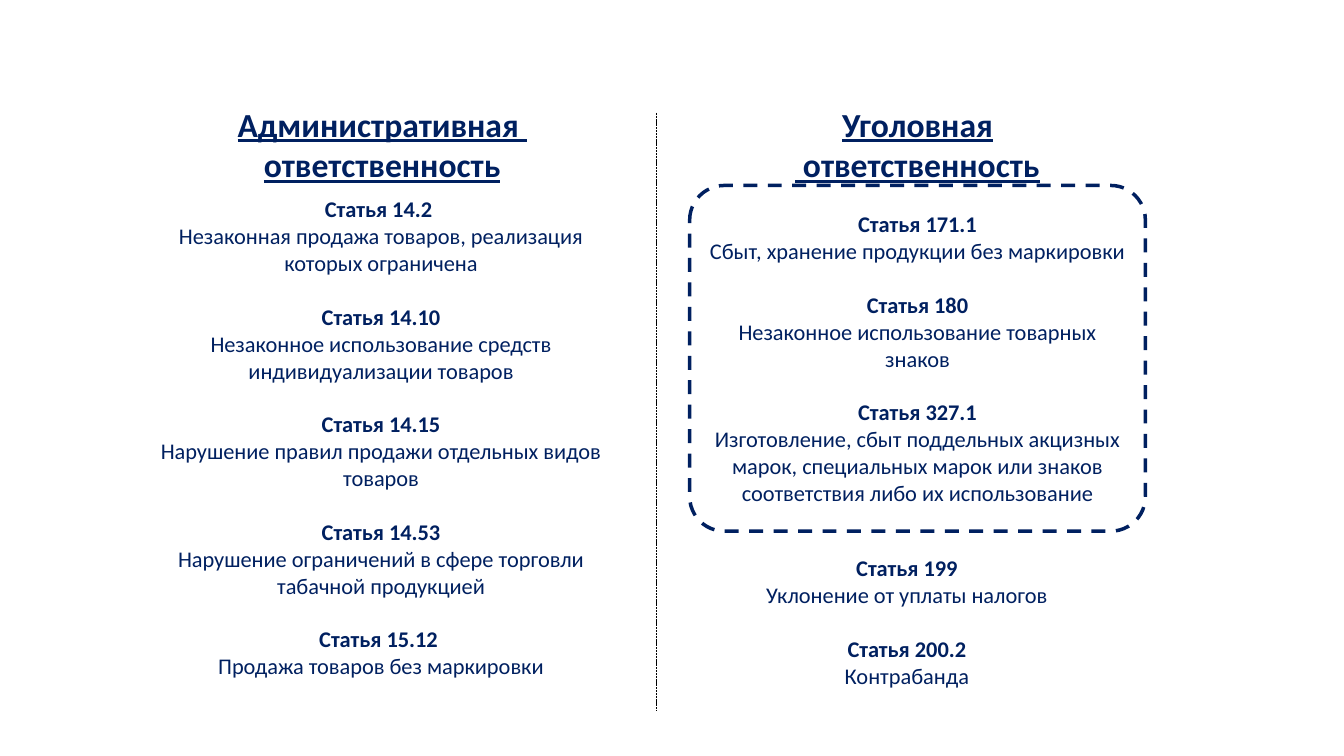
"""Build a slide comparing administrative and criminal liability articles."""
from dataclasses import dataclass

from lxml import etree
from pptx import Presentation
from pptx.dml.color import RGBColor
from pptx.enum.dml import MSO_LINE
from pptx.enum.shapes import MSO_CONNECTOR, MSO_SHAPE
from pptx.enum.text import MSO_ANCHOR, MSO_AUTO_SIZE, PP_ALIGN
from pptx.oxml.ns import qn
from pptx.shapes.base import BaseShape
from pptx.text.text import TextFrame
from pptx.util import Pt

EMU_PER_PX = 9144
COMPARISON_LAYOUT = 3 + 1
DASH, FINE_DASH = MSO_LINE.DASH, MSO_LINE.SQUARE_DOT
TOP, MIDDLE = MSO_ANCHOR.TOP, MSO_ANCHOR.MIDDLE
CENTER = PP_ALIGN.CENTER
NO_AUTOFIT = MSO_AUTO_SIZE.NONE
ROUNDED, STRAIGHT = MSO_SHAPE.ROUNDED_RECTANGLE, MSO_CONNECTOR.STRAIGHT


@dataclass(frozen=True)
class Theme:
    navy: RGBColor = RGBColor(0x00, 0x20, 0x60)
    black: RGBColor = RGBColor(0, 0, 0)
    font: str = "Calibri"
    heading_size: int = 24
    body_size: int = 16
    article_gap: float = 19.2
    frame_width: float = 2.5
    divider_width: float = 0.5


@dataclass(frozen=True)
class Box:
    left: int
    top: int
    width: int
    height: int


@dataclass(frozen=True)
class Article:
    number: str
    offence: str


@dataclass(frozen=True)
class Heading:
    placeholder: int
    box: Box
    lines: tuple[str, ...]


@dataclass(frozen=True)
class ArticleList:
    placeholder: int
    box: Box
    articles: tuple[Article, ...]


THEME = Theme()
HEADINGS = (
    Heading(1, Box(197, 98, 364, 91), ("Административная ", "ответственность")),
    Heading(3, Box(754, 98, 312, 91), ("Уголовная", " ответственность")),
)
LISTS = (
    ArticleList(2, Box(141, 189, 474, 522), (
        Article("Статья 14.2 ", "Незаконная продажа товаров, реализация которых ограничена"),
        Article("Статья 14.10", "Незаконное использование средств индивидуализации товаров"),
        Article("Статья 14.15", "Нарушение правил продажи отдельных видов товаров"),
        Article("Статья 14.53", "Нарушение ограничений в сфере торговли табачной продукцией"),
        Article("Статья 15.12 ", "Продажа товаров без маркировки"),
    )),
    ArticleList(4, Box(663, 545, 473, 167), (
        Article("Статья 199", "Уклонение от уплаты налогов"),
        Article("Статья 200.2", "Контрабанда"),
    )),
)
FRAMED_BOX = Box(684, 184, 452, 343)
FRAMED_ARTICLES = (
    Article("Статья 171.1", "Сбыт, хранение продукции без маркировки"),
    Article("Статья 180", "Незаконное использование товарных знаков"),
    Article("Статья 327.1", "Изготовление, сбыт поддельных акцизных марок, специальных "
            "марок или знаков соответствия либо их использование"),
)


def px(length: int) -> int:
    return length * EMU_PER_PX


def place(shape: BaseShape, box: Box) -> None:
    shape.left, shape.top = px(box.left), px(box.top)
    shape.width, shape.height = px(box.width), px(box.height)


def prepare(frame: TextFrame, anchor: MSO_ANCHOR = TOP) -> None:
    frame.word_wrap = True
    frame.auto_size = NO_AUTOFIT
    frame.vertical_anchor = anchor


def write(frame: TextFrame, text: str, *, size: int, bold: bool = False,
          underline: bool = False, gap: float = 0) -> None:
    last = frame.paragraphs[-1]
    paragraph = frame.add_paragraph() if last.runs else last
    paragraph.alignment = CENTER
    paragraph.space_before, paragraph.space_after = Pt(gap), Pt(0)
    properties = paragraph._p.get_or_add_pPr()
    properties.set("marL", "0")
    properties.set("indent", "0")
    etree.SubElement(properties, qn("a:buNone"))
    run = paragraph.add_run()
    run.text = text
    run.font.name, run.font.size = THEME.font, Pt(size)
    run.font.bold, run.font.underline = bold, underline
    run.font.color.rgb = THEME.navy


def write_articles(frame: TextFrame, articles: tuple[Article, ...]) -> None:
    for position, article in enumerate(articles):
        write(frame, article.number, size=THEME.body_size, bold=True,
              gap=THEME.article_gap if position else 0)
        write(frame, article.offence, size=THEME.body_size)


def main() -> None:
    deck = Presentation()
    deck.slide_width, deck.slide_height = px(1333), px(750)
    slide = deck.slides.add_slide(deck.slide_layouts[COMPARISON_LAYOUT])
    unused_title = slide.shapes.title.element
    unused_title.getparent().remove(unused_title)
    columns = {holder.placeholder_format.idx: holder for holder in slide.placeholders}

    for heading in HEADINGS:
        holder = columns[heading.placeholder]
        place(holder, heading.box)
        prepare(holder.text_frame)
        for line in heading.lines:
            write(holder.text_frame, line, size=THEME.heading_size, bold=True, underline=True)

    for listing in LISTS:
        holder = columns[listing.placeholder]
        place(holder, listing.box)
        prepare(holder.text_frame)
        write_articles(holder.text_frame, listing.articles)

    divider = slide.shapes.add_connector(STRAIGHT, px(651), px(112), px(651), px(705))
    divider.line.color.rgb = THEME.black
    divider.line.width = Pt(THEME.divider_width)
    divider.line.dash_style = FINE_DASH
    etree.SubElement(divider.element.spPr, qn("a:effectLst"))

    framed = slide.shapes.add_shape(ROUNDED, 0, 0, 0, 0)
    place(framed, FRAMED_BOX)
    framed.adjustments[0] = 0.1
    framed.shadow.inherit = False
    framed.fill.background()
    framed.line.color.rgb = THEME.navy
    framed.line.width = Pt(THEME.frame_width)
    framed.line.dash_style = DASH
    prepare(framed.text_frame, MIDDLE)
    write_articles(framed.text_frame, FRAMED_ARTICLES)

    deck.save("out.pptx")


if __name__ == "__main__":
    main()
